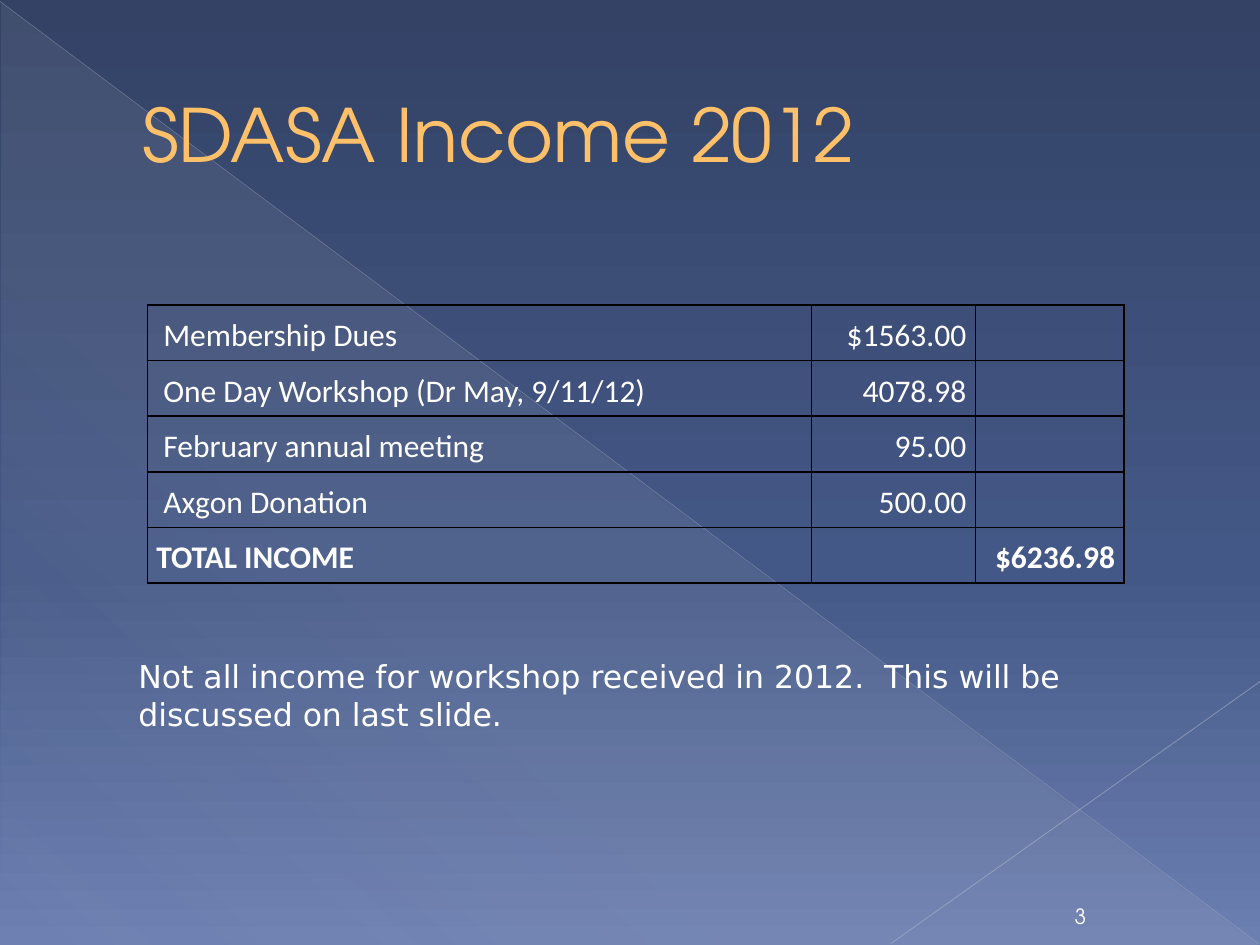
from dataclasses import dataclass

from lxml.etree import SubElement
from pptx import Presentation
from pptx.dml.color import RGBColor
from pptx.enum.shapes import MSO_CONNECTOR, MSO_SHAPE
from pptx.enum.text import MSO_ANCHOR, PP_ALIGN
from pptx.oxml import parse_xml
from pptx.oxml.ns import nsdecls, qn
from pptx.util import Cm, Pt

COLOURS = {
    "night": "334265", "dusk": "445887", "haze": "6C7FB1", "veil": "D4D4D6",
    "long_ray": "B9BDC8", "short_ray": "C1C4CE", "title": "FFC06A",
    "title_edge": "A67800", "text": "FFFFFF", "border": "000000",
}
TITLE_FORMAT = {"name": "TeX Gyre Adventor", "size": Pt(42)}
TABLE_FORMAT = {"name": "Calibri", "size": Pt(18)}
NOTE_FORMAT = {"name": "DejaVu Sans", "size": Pt(18)}
NUMBER_FORMAT = {"name": "TeX Gyre Adventor", "size": Pt(12)}

COLUMN_WIDTHS = (13.39, 3.3, 3.0)
ROW_HEIGHT = 1.12
INCOME = [
    (" Membership Dues", "$1563.00", ""),
    (" One Day Workshop (Dr May, 9/11/12)", "4078.98", ""),
    (" February annual meeting", "95.00", ""),
    (" Axgon Donation", "500.00", ""),
    ("TOTAL INCOME", "", "$6236.98"),
]


@dataclass
class Stop:
    position: int
    colour: str
    opacity: int = 100


@dataclass
class Ray:
    start: tuple[float, float]
    end: tuple[float, float]
    colour: str
    width: float
    opacity: int


@dataclass
class TextBlock:
    place: tuple[float, float, float, float]
    lines: list[str]
    font: dict
    colour: str = "text"
    anchor: MSO_ANCHOR = MSO_ANCHOR.TOP
    align: PP_ALIGN = PP_ALIGN.LEFT
    indent: float = 0


RAYS = [
    Ray((0, 0.03), (25.37, 19.02), "long_ray", 0.39, 35),
    Ray((25.4, 13.74), (17.96, 19.02), "short_ray", 0.47, 45),
]
TITLE = TextBlock((1.27, 0.74, 22.86, 3.89), ["SDASA Income 2012"], TITLE_FORMAT,
                  "title", MSO_ANCHOR.MIDDLE, indent=1.35)
NOTE = TextBlock((2.54, 13.13, 19.48, 1.8),
                 ["Not all income for workshop received in 2012.  This will be",
                  "discussed on last slide."], NOTE_FORMAT)
NUMBER = TextBlock((21.08, 18.01, 1.4, 0.84), ["3"], NUMBER_FORMAT,
                   anchor=MSO_ANCHOR.BOTTOM, align=PP_ALIGN.CENTER)


def rgb(name: str) -> RGBColor:
    return RGBColor.from_string(COLOURS[name])


def set_gradient(fill, holder, stops: list[Stop], angle: int) -> None:
    """Give the element that holds the fill a linear gradient."""
    fill.background()
    marks = "".join(
        f'<a:gs pos="{stop.position * 1000}"><a:srgbClr val="{COLOURS[stop.colour]}">'
        f'<a:alpha val="{stop.opacity * 1000}"/></a:srgbClr></a:gs>'
        for stop in stops)
    gradient = parse_xml(
        f'<a:gradFill {nsdecls("a")} rotWithShape="1"><a:gsLst>{marks}</a:gsLst>'
        f'<a:lin ang="{angle * 60000}" scaled="0"/></a:gradFill>')
    holder.replace(holder.find(qn("a:noFill")), gradient)


def draw_veil(page) -> None:
    veil = page.shapes.add_shape(MSO_SHAPE.RIGHT_TRIANGLE,
                                 Cm(0.03), Cm(0.05), Cm(25.35), Cm(19))
    veil.shadow.inherit = False
    set_gradient(veil.fill, veil._element.spPr,
                 [Stop(0, "veil", 10), Stop(70, "veil", 8), Stop(100, "veil", 1)], 133)
    veil.line.fill.background()


def draw_ray(page, ray: Ray) -> None:
    line = page.shapes.add_connector(
        MSO_CONNECTOR.STRAIGHT, *(Cm(value) for value in ray.start + ray.end))
    line.line.color.rgb = rgb(ray.colour)
    line.line.width = Pt(ray.width)
    properties = line._element.spPr
    colour = properties.find(".//" + qn("a:srgbClr"))
    SubElement(colour, qn("a:alpha"), val=str(ray.opacity * 1000))
    SubElement(properties, qn("a:effectLst"))


def write(para, text: str, font: dict, colour: str = "text"):
    span = para.add_run()
    span.text = text
    for name, value in font.items():
        setattr(span.font, name, value)
    span.font.color.rgb = rgb(colour)
    return span


def draw_text(page, block: TextBlock):
    box = page.shapes.add_textbox(*(Cm(value) for value in block.place))
    frame = box.text_frame
    frame.word_wrap = True
    frame.vertical_anchor = block.anchor
    for index, line in enumerate(block.lines):
        para = frame.add_paragraph() if index else frame.paragraphs[0]
        para.alignment = block.align
        if block.indent:
            para._p.get_or_add_pPr().set("marL", str(Cm(block.indent)))
        write(para, line, block.font, block.colour)
    return box


def outline_text(span, colour: str, width: float) -> None:
    span.font._element.insert(0, parse_xml(
        f'<a:ln {nsdecls("a")} w="{Pt(width)}"><a:solidFill>'
        f'<a:srgbClr val="{COLOURS[colour]}"/></a:solidFill></a:ln>'))


def set_borders(cell) -> None:
    properties = cell._tc.get_or_add_tcPr()
    for index, side in enumerate(("lnL", "lnR", "lnT", "lnB")):
        properties.insert(index, parse_xml(
            f'<a:{side} {nsdecls("a")} w="{Pt(1)}"><a:solidFill>'
            f'<a:srgbClr val="{COLOURS["border"]}"/></a:solidFill></a:{side}>'))


def draw_income(page) -> None:
    table = page.shapes.add_table(
        len(INCOME), len(COLUMN_WIDTHS), Cm(2.97), Cm(6.15),
        Cm(sum(COLUMN_WIDTHS)), Cm(ROW_HEIGHT * len(INCOME))).table
    table.first_row = table.horz_banding = False
    for column, width in zip(table.columns, COLUMN_WIDTHS):
        column.width = Cm(width)
    cell_format = {"margin_left": Cm(0.18), "margin_right": Cm(0.18), "margin_top": 0,
                   "margin_bottom": 0, "vertical_anchor": MSO_ANCHOR.MIDDLE}
    for row_index, row in enumerate(INCOME):
        table.rows[row_index].height = Cm(ROW_HEIGHT)
        font = TABLE_FORMAT | {"bold": row_index == len(INCOME) - 1}
        for column_index, text in enumerate(row):
            cell = table.cell(row_index, column_index)
            for name, value in cell_format.items():
                setattr(cell, name, value)
            cell.fill.background()
            set_borders(cell)
            if text:
                para = cell.text_frame.paragraphs[0]
                para.alignment = PP_ALIGN.RIGHT if column_index else PP_ALIGN.LEFT
                para.line_spacing = 1.15
                write(para, text, font)


def main() -> None:
    deck = Presentation()
    deck.slide_width, deck.slide_height = Cm(25.4), Cm(19.05)
    page = deck.slides.add_slide(deck.slide_layouts[6])
    backdrop = page.background.fill
    backdrop.background()
    set_gradient(backdrop, page._element.find(".//" + qn("p:bgPr")),
                 [Stop(0, "night"), Stop(60, "dusk"), Stop(100, "haze")], 90)
    draw_veil(page)
    for ray in RAYS:
        draw_ray(page, ray)
    title = draw_text(page, TITLE)
    outline_text(title.text_frame.paragraphs[0].runs[0], "title_edge", 0.5)
    draw_income(page)
    draw_text(page, NOTE)
    draw_text(page, NUMBER)
    deck.save("out.pptx")


if __name__ == "__main__":
    main()
